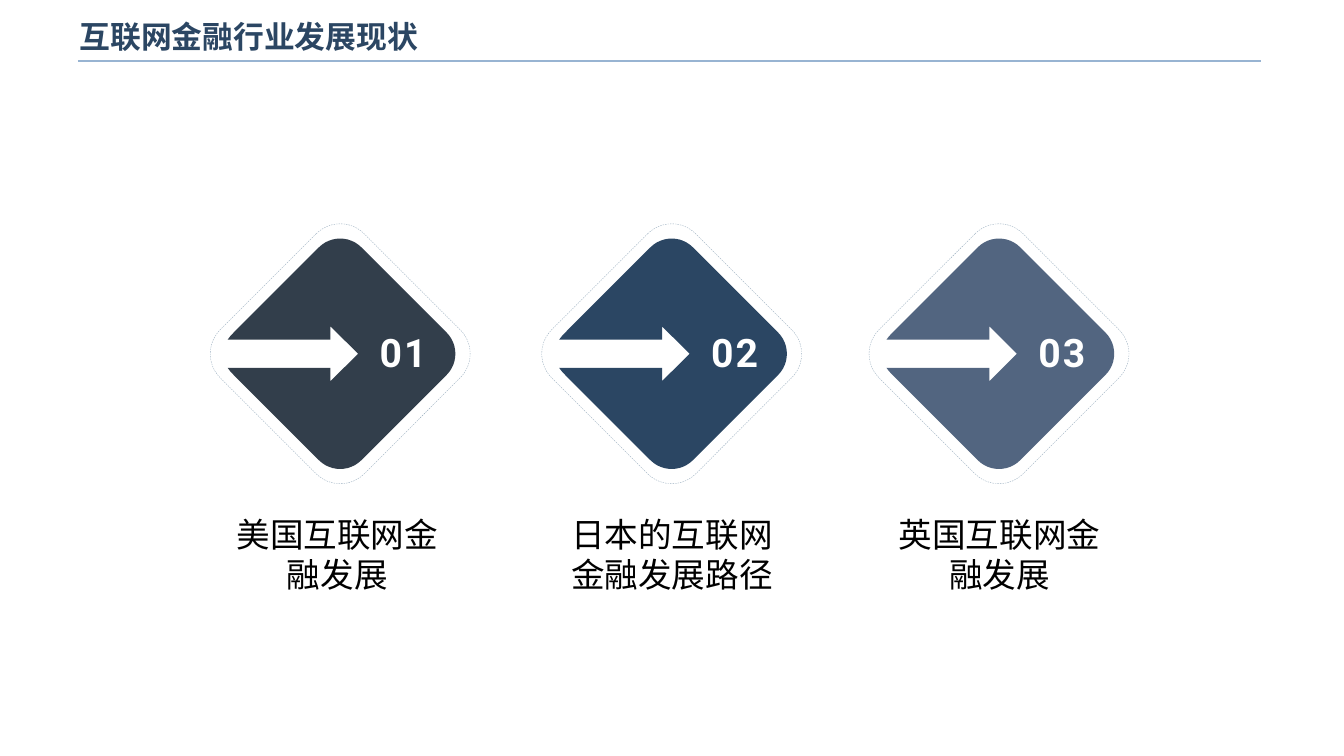
from dataclasses import dataclass

from lxml import etree
from pptx import Presentation
from pptx.dml.color import RGBColor
from pptx.enum.dml import MSO_LINE
from pptx.enum.shapes import MSO_CONNECTOR, MSO_SHAPE
from pptx.enum.text import MSO_ANCHOR, MSO_AUTO_SIZE, PP_ALIGN
from pptx.oxml.ns import qn
from pptx.util import Pt

STRAIGHT = MSO_CONNECTOR.STRAIGHT
ROUNDED = MSO_SHAPE.ROUNDED_RECTANGLE
DASH = MSO_LINE.DASH
MIDDLE, TOP = MSO_ANCHOR.MIDDLE, MSO_ANCHOR.TOP
LEFT, CENTER = PP_ALIGN.LEFT, PP_ALIGN.CENTER
FIXED, GROW = MSO_AUTO_SIZE.NONE, MSO_AUTO_SIZE.SHAPE_TO_FIT_TEXT


@dataclass(frozen=True)
class Theme:
    navy: str = "2B4663"
    slate: str = "323E4B"
    steel: str = "526580"
    rule: str = "98B4D2"
    ring: str = "97ABBD"
    white: str = "FFFFFF"
    black: str = "000000"
    title_size: int = 22
    number_size: int = 28
    label_size: int = 24
    title_font: str = "Arial"
    number_font: str = "Roboto"
    chinese_font: str = "Noto Sans CJK SC"


THEME = Theme()
CARDS = [
    ("01", "美国互联网金融发展", THEME.slate, 243, 153.4),
    ("02", "日本的互联网金融发展路径", THEME.navy, 479.8, 392.4),
    ("03", "英国互联网金融发展", THEME.steel, 713.6, 626.4),
]
CENTER_Y = 252.7
RING_SIDE = 145.5
CORNER_STEPS = 12


def color(value):
    return RGBColor.from_string(value)


def set_values(target, values):
    for name, value in values.items():
        setattr(target, name, value)


def write_text(box, text, frame_format, align, font_format, text_color, spacing=0):
    frame = box.text_frame
    set_values(frame, frame_format)
    para = frame.paragraphs[0]
    para.alignment = align
    span = para.add_run()
    span.text = text
    set_values(span.font, font_format)
    span.font.color.rgb = color(text_color)
    properties = span.font._element
    etree.SubElement(properties, qn("a:ea")).set("typeface", THEME.chinese_font)
    if spacing:
        properties.set("spc", str(spacing))


def add_title(page, text):
    title = page.shapes.title
    set_values(title, {"left": Pt(49.7), "top": Pt(6.5), "width": Pt(771), "height": Pt(38)})
    write_text(
        title, text,
        {"word_wrap": True, "auto_size": FIXED, "vertical_anchor": MIDDLE},
        LEFT,
        {"name": THEME.title_font, "size": Pt(THEME.title_size), "bold": True},
        THEME.navy,
    )


def add_rule(page):
    rule = page.shapes.add_connector(STRAIGHT, Pt(55.7), Pt(43.5), Pt(900.7), Pt(43.5))
    rule.line.color.rgb = color(THEME.rule)
    rule.line.width = Pt(1)
    etree.SubElement(rule._element.spPr, qn("a:effectLst"))


def top_corner():
    controls = [(-15.2, -76), (-6.7, -84.4), (6.7, -84.4), (15.2, -76)]
    points = []
    for step in range(CORNER_STEPS + 1):
        t = step / CORNER_STEPS
        weights = [(1 - t) ** 3, 3 * t * (1 - t) ** 2, 3 * t ** 2 * (1 - t), t ** 3]
        points.append(tuple(
            sum(weight * point[axis] for weight, point in zip(weights, controls))
            for axis in (0, 1)
        ))
    return points


def diamond_outline():
    top = top_corner()
    right = [(-y, x) for x, y in top]
    bottom = [(-x, -y) for x, y in top]
    upper_notch = [(-6.9, -19.6), (-6.9, -10), (-80.4, -10), (-78.6, -12.4), (-76, -15.2)]
    lower_notch = [(x, -y) for x, y in reversed(upper_notch)]
    return top + right + bottom + lower_notch + [(12.8, 0)] + upper_notch


def add_ring(group, center_x):
    corner = (Pt(center_x - RING_SIDE / 2), Pt(CENTER_Y - RING_SIDE / 2))
    ring = group.shapes.add_shape(ROUNDED, *corner, Pt(RING_SIDE), Pt(RING_SIDE))
    ring.rotation = 45
    ring.shadow.inherit = False
    ring.fill.background()
    ring.line.color.rgb = color(THEME.ring)
    set_values(ring.line, {"width": Pt(0.25), "dash_style": DASH})


def add_diamond(group, center_x, fill):
    points = [(Pt(center_x + x), Pt(CENTER_Y + y)) for x, y in diamond_outline()]
    builder = group.shapes.build_freeform(*points[0])
    builder.add_line_segments(points[1:], close=True)
    diamond = builder.convert_to_shape()
    diamond.shadow.inherit = False
    diamond.fill.solid()
    diamond.fill.fore_color.rgb = color(fill)
    diamond.line.fill.background()


def add_number(group, center_x, number):
    box = group.shapes.add_textbox(Pt(center_x + 21), Pt(231.1), Pt(49.7), Pt(43.2))
    write_text(
        box, number,
        {"word_wrap": False, "auto_size": FIXED, "vertical_anchor": TOP},
        LEFT,
        {"name": THEME.number_font, "size": Pt(THEME.number_size), "bold": True},
        THEME.white,
        spacing=150,
    )


def add_label(page, left, text):
    box = page.shapes.add_textbox(Pt(left), Pt(363.6), Pt(175), Pt(65.5))
    write_text(
        box, text,
        {"word_wrap": True, "auto_size": GROW, "vertical_anchor": TOP},
        CENTER,
        {"name": THEME.chinese_font, "size": Pt(THEME.label_size)},
        THEME.black,
    )


def add_card(page, number, label, fill, center_x, label_left):
    group = page.shapes.add_group_shape()
    add_ring(group, center_x)
    add_diamond(group, center_x, fill)
    add_number(group, center_x, number)
    add_label(page, label_left, label)


def main():
    deck = Presentation()
    set_values(deck, {"slide_width": Pt(960), "slide_height": Pt(540)})
    page = deck.slides.add_slide(deck.slide_layouts[5])
    page.background.fill.solid()
    page.background.fill.fore_color.rgb = color(THEME.white)
    add_rule(page)
    add_title(page, "互联网金融行业发展现状")
    for card in CARDS:
        add_card(page, *card)
    deck.save("out.pptx")


if __name__ == "__main__":
    main()
